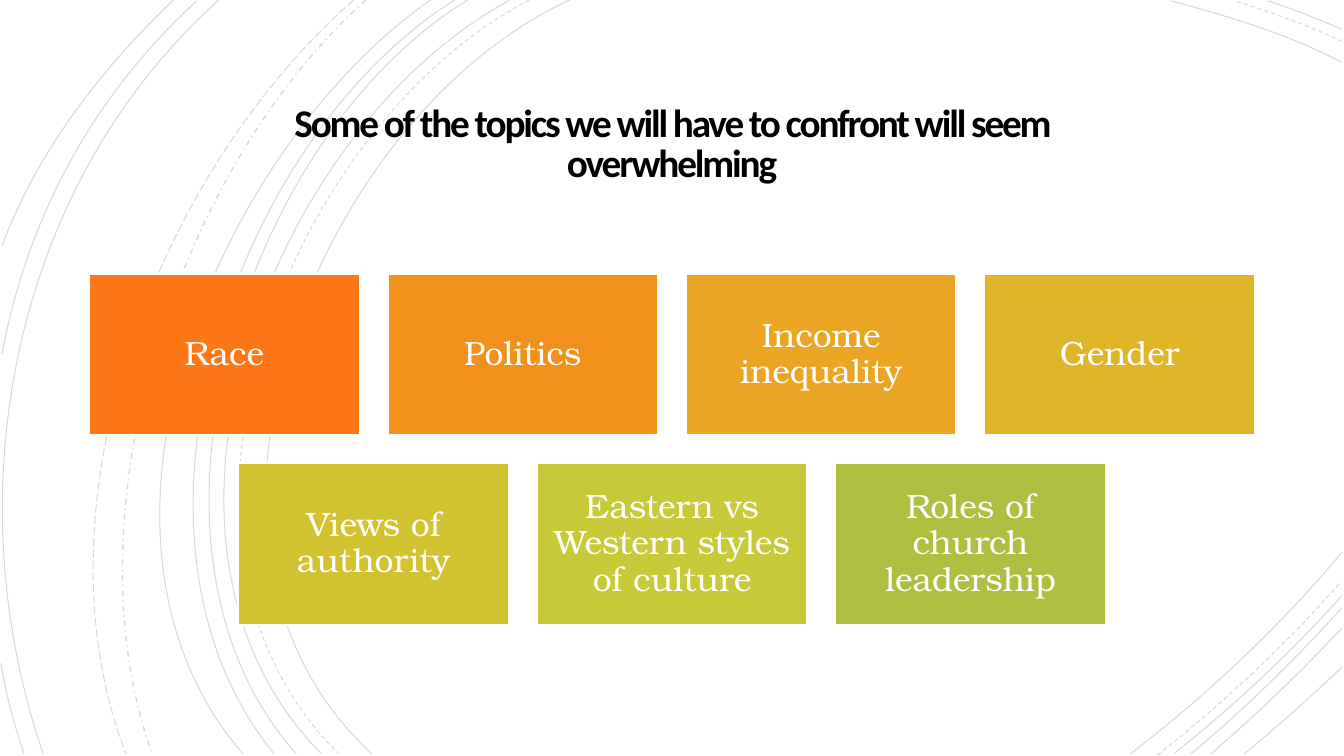
from dataclasses import dataclass

from lxml import etree
from pptx import Presentation
from pptx.dml.color import RGBColor
from pptx.enum import dml, shapes, text
from pptx.oxml import ns
from pptx.util import Inches, Pt

TITLE = "Some of the topics we will have to confront will seem overwhelming"
TOPIC_ROWS = [
    [("Race", "FC7715"), ("Politics", "F2901C"),
     ("Income inequality", "E9A523"), ("Gender", "DFB62A")],
    [("Views of authority", "D4C331"),
     ("Eastern vs Western styles of culture", "C8CA39"),
     ("Roles of church leadership", "AFBF41")],
]
ARCS = {
    ("SOLID", 0.75): [
        [(5.65, 0), (3.15, 1.15), (1.43, 5.4), (3.69, 7.48)],
        [(5.06, 0), (2.7, 1.27), (1.1, 5.37), (3.19, 7.48)],
        [(4.64, 0), (2.44, 1.33), (1.1, 5.41), (2.94, 7.48)],
        [(4.51, 0), (2.31, 1.38), (0.97, 5.33), (2.72, 7.48)],
        [(4.27, 0), (2.17, 1.47), (0.53, 5.29), (2.41, 7.48)],
        [(2.17, 0), (0.11, 1.85), (-0.46, 4.9), (0.43, 7.48)],
        [(1.95, 0.01), (0.92, 0.96), (0.28, 2.14), (0.02, 3.51)],
        [(0.01, 6.58), (0.06, 6.89), (0.14, 7.19), (0.24, 7.48)],
        [(1.72, 0), (1, 0.69), (0.37, 1.5), (0.02, 2.44)],
        [(13.31, 0.62), (12.78, 0.34), (12.18, 0.16), (11.62, 0.01)],
        [(13.31, 0.29), (13.07, 0.19), (12.83, 0.09), (12.58, 0.01)],
        [(11.21, 7.48), (11.97, 6.9), (12.69, 6.22), (13.31, 5.48)],
        [(11.64, 7.48), (12.23, 7.01), (12.8, 6.48), (13.31, 5.91)],
        [(11.81, 7.48), (12.34, 7.04), (12.84, 6.55), (13.31, 6.03)],
        [(12.01, 7.48), (12.46, 7.09), (12.9, 6.67), (13.31, 6.23)],
        [(12.34, 7.48), (12.67, 7.21), (12.99, 6.92), (13.31, 6.62)],
    ],
    ("DASH", 0.75): [
        [(5.25, 0), (2.85, 1.25), (1.23, 5.37), (3.36, 7.48)],
        [(13.31, 0.41), (12.97, 0.25), (12.6, 0.12), (12.25, 0.01)],
        [(11.48, 7.49), (12.13, 6.98), (12.75, 6.4), (13.3, 5.77)],
    ],
    ("DASH_DOT", 1): [[(3.63, 0), (1.76, 1.66), (0.65, 5.09), (1.51, 7.48)]],
    ("LONG_DASH", 0.75): [[(3.51, 0), (1.57, 1.69), (0.29, 4.99), (1.25, 7.48)]],
}
SLIDE_WIDTH, SLIDE_HEIGHT = 13.33, 7.5
BOX_WIDTH, BOX_HEIGHT = 2.69, 1.61
COLUMN_PITCH, ROW_PITCH, FIRST_ROW_TOP = 2.96, 1.88, 2.71


@dataclass(frozen=True)
class Theme:
    ink: str = "000000"
    paper: str = "FFFFFF"
    title_font: str = "Calibri"
    topic_font: str = "TeX Gyre Bonum"
    title_size: int = 28
    topic_size: int = 24
    arc_opacity: int = 15


theme = Theme()


def rgb(color):
    return RGBColor.from_string(color)


def write_text(shape, words, font_name, size, color, line_spacing, inset):
    frame = shape.text_frame
    frame.text = words
    frame.word_wrap = True
    frame.auto_size = text.MSO_AUTO_SIZE.NONE
    frame.vertical_anchor = text.MSO_ANCHOR.MIDDLE
    frame.margin_left = frame.margin_right = Inches(inset)
    frame.margin_top = frame.margin_bottom = Inches(inset)
    paragraph = frame.paragraphs[0]
    paragraph.alignment = text.PP_ALIGN.CENTER
    paragraph.line_spacing = line_spacing
    paragraph.space_before = Pt(0)
    paragraph.font.name = font_name
    paragraph.font.size = Pt(size)
    paragraph.font.color.rgb = rgb(color)
    return paragraph


def add_arc(slide, points, dash, width):
    start, *rest = [(Inches(x), Inches(y)) for x, y in points]
    builder = slide.shapes.build_freeform(*start)
    builder.add_line_segments(rest, close=False)
    shape = builder.convert_to_shape()
    outline = shape._element.find(".//" + ns.qn("a:path"))
    curve = etree.SubElement(outline, ns.qn("a:cubicBezTo"))
    for segment in outline.findall(ns.qn("a:lnTo")):
        curve.append(segment[0])
        outline.remove(segment)
    shape.shadow.inherit = False
    shape.fill.background()
    shape.line.color.rgb = rgb(theme.ink)
    shape.line.width = Pt(width)
    shape.line.dash_style = dml.MSO_LINE[dash]
    ink = shape.line._ln.find(".//" + ns.qn("a:srgbClr"))
    etree.SubElement(ink, ns.qn("a:alpha"), val=str(theme.arc_opacity * 1000))


def add_title(slide):
    title = slide.shapes.title
    title.left, title.top = Inches(1.92), Inches(0.87)
    title.width, title.height = Inches(9.49), Inches(1.15)
    paragraph = write_text(title, TITLE, theme.title_font, theme.title_size,
                           theme.ink, 0.85, 0.25)
    paragraph.font.bold = True
    paragraph.runs[0]._r.get_or_add_rPr().set("spc", "-150")


def add_topic(slide, words, color, left, top):
    box = slide.shapes.add_shape(
        shapes.MSO_SHAPE.RECTANGLE, Inches(left), Inches(top),
        Inches(BOX_WIDTH), Inches(BOX_HEIGHT))
    box.shadow.inherit = False
    box.fill.solid()
    box.fill.fore_color.rgb = rgb(color)
    box.line.color.rgb = rgb(theme.paper)
    box.line.width = Pt(2)
    write_text(box, words, theme.topic_font, theme.topic_size, theme.paper, 0.9, 0.1)


def main():
    presentation = Presentation()
    presentation.slide_width = Inches(SLIDE_WIDTH)
    presentation.slide_height = Inches(SLIDE_HEIGHT)
    slide = presentation.slides.add_slide(presentation.slide_layouts[5])
    slide.background.fill.solid()
    slide.background.fill.fore_color.rgb = rgb(theme.paper)
    for (dash, width), arcs in ARCS.items():
        for points in arcs:
            add_arc(slide, points, dash, width)
    add_title(slide)
    for row, topics in enumerate(TOPIC_ROWS):
        row_width = BOX_WIDTH + (len(topics) - 1) * COLUMN_PITCH
        row_left = (SLIDE_WIDTH - row_width) / 2
        for column, (words, color) in enumerate(topics):
            add_topic(slide, words, color, row_left + column * COLUMN_PITCH,
                      FIRST_ROW_TOP + row * ROW_PITCH)
    presentation.save("out.pptx")


if __name__ == "__main__":
    main()
